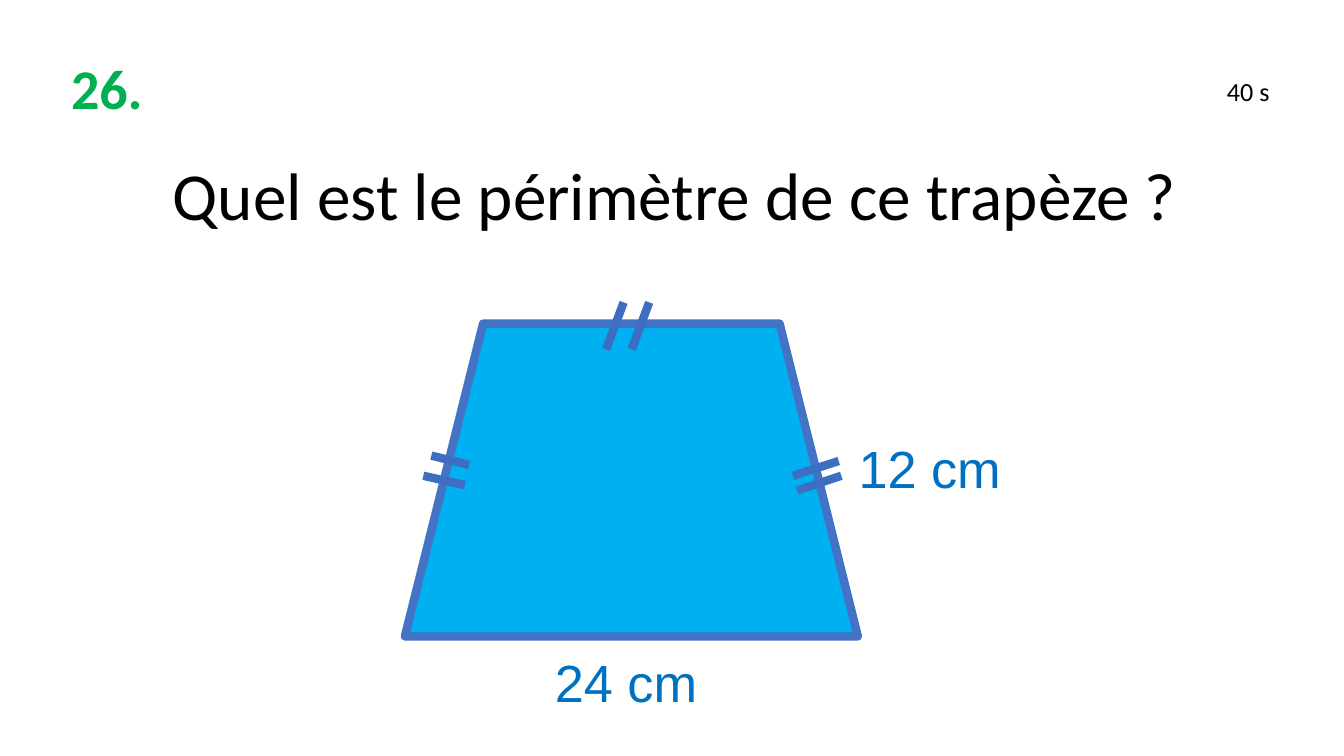
from lxml.etree import SubElement
from pptx import Presentation
from pptx.dml.color import RGBColor
from pptx.enum.shapes import MSO_CONNECTOR as Connector, MSO_SHAPE as Shape
from pptx.enum.text import MSO_ANCHOR as Anchor, MSO_AUTO_SIZE as AutoSize, PP_ALIGN as Align
from pptx.oxml.ns import qn
from pptx.util import Pt

GREEN, BLACK, LABEL_BLUE = "00B050", "000000", "0070C0"
FILL_BLUE, OUTLINE_BLUE, TICK_BLUE = "00B0F0", "4472C4", "3E6EC2"
LINE_WIDTH = 4.5

EQUAL_SIDE_TICKS = [
    (231.1, 244.1, 251.3, 249.1), (226.8, 254.9, 249.1, 259.9),
    (424.8, 254.9, 449.3, 247), (427, 262.8, 450.7, 254.9),
    (324.7, 187.2, 334.1, 162), (338.4, 187.2, 347.8, 162),
]


def color(value):
    """Turn a hex string into a colour."""
    return RGBColor.from_string(value)


def place(shape, left, top, width, height):
    """Move and size a shape, in points."""
    shape.left, shape.top = Pt(left), Pt(top)
    shape.width, shape.height = Pt(width), Pt(height)


def write(shape, text, size, font_name, ink, bold=False, align=Align.LEFT):
    """Fill a text shape with one formatted paragraph."""
    frame = shape.text_frame
    frame.text = text
    frame.word_wrap = True
    frame.auto_size = AutoSize.NONE
    frame.vertical_anchor = Anchor.TOP
    paragraph = frame.paragraphs[0]
    paragraph.alignment = align
    font = paragraph.font
    font.name, font.size, font.bold = font_name, Pt(size), bold
    font.color.rgb = color(ink)


def add_text(slide, box, *args, **kwargs):
    """Add a text box with one formatted paragraph."""
    write(slide.shapes.add_textbox(*map(Pt, box)), *args, **kwargs)


def set_line(line, ink):
    """Give a line its colour and the common width."""
    line.color.rgb = color(ink)
    line.width = Pt(LINE_WIDTH)


def add_trapezoid(slide, box):
    """Add the filled trapezoid."""
    trapezoid = slide.shapes.add_shape(Shape.TRAPEZOID, *map(Pt, box))
    trapezoid.adjustments[0] = 0.25
    trapezoid.shadow.inherit = False
    trapezoid.fill.solid()
    trapezoid.fill.fore_color.rgb = color(FILL_BLUE)
    set_line(trapezoid.line, OUTLINE_BLUE)


def add_tick(slide, ends):
    """Add one mark of an equal side."""
    tick = slide.shapes.add_connector(Connector.STRAIGHT, *map(Pt, ends))
    set_line(tick.line, TICK_BLUE)
    SubElement(tick._element.spPr, qn("a:effectLst"))


def main():
    """Build and save the slide."""
    presentation = Presentation()
    presentation.slide_width, presentation.slide_height = Pt(720), Pt(405)
    slide = presentation.slides.add_slide(presentation.slide_layouts[5])

    title = slide.shapes.title
    place(title, 62, 78.5, 599, 51)
    write(title, "Quel est le périmètre de ce trapèze ?", 36, "Calibri", BLACK,
          align=Align.CENTER)
    add_text(slide, (31, 25.2, 67, 43.2), "26.", 30, "Calibri", GREEN, bold=True)
    add_text(slide, (650.2, 36.7, 44, 19.4), "40 s", 14, "Calibri", BLACK)

    add_trapezoid(slide, (216.9, 173.4, 242.7, 167.6))
    for ends in EQUAL_SIDE_TICKS:
        add_tick(slide, ends)
    for text, left, top in (("12 cm", 452.9, 230.4), ("24 cm", 290.2, 344.9)):
        add_text(slide, (left, top, 103.7, 41), text, 28, "Arial", LABEL_BLUE)

    presentation.save("out.pptx")


if __name__ == "__main__":
    main()
